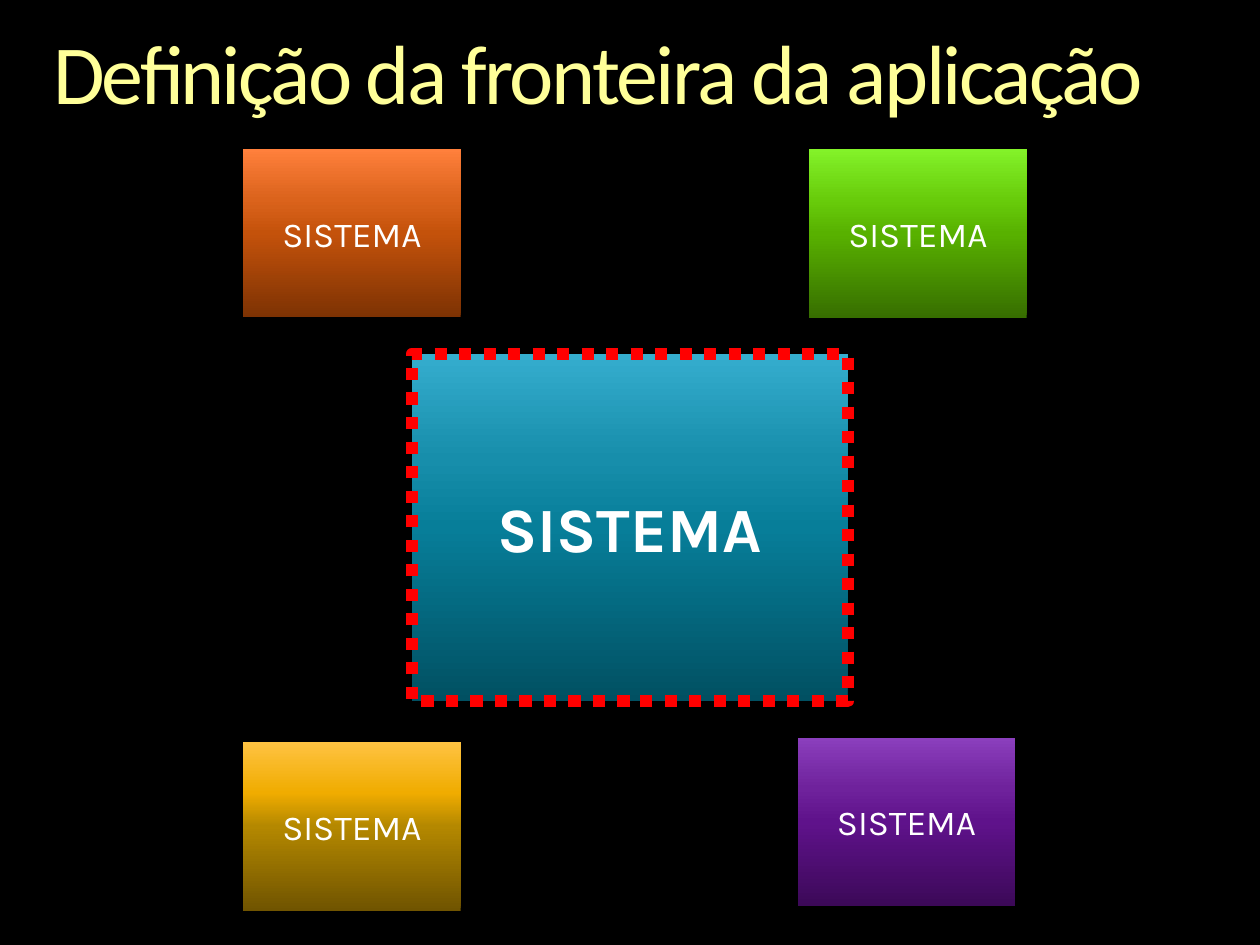
import copy

import pptx
import pptx.dml.color
import pptx.enum.dml
import pptx.enum.shapes
import pptx.enum.text
import pptx.oxml.ns
import pptx.util

Cm = pptx.util.Cm
Pt = pptx.util.Pt
RGBColor = pptx.dml.color.RGBColor

BLACK = RGBColor(0x00, 0x00, 0x00)
WHITE = RGBColor(0xFF, 0xFF, 0xFF)
RED = RGBColor(0xFF, 0x00, 0x00)
YELLOW = RGBColor(0xFF, 0xFF, 0x99)
BLUES = [RGBColor(0x01, 0x50, 0x62), RGBColor(0x07, 0x7E, 0x99),
         RGBColor(0x17, 0x8E, 0xAB), RGBColor(0x35, 0xAD, 0xCE)]
ORANGES = [RGBColor(0x7D, 0x32, 0x03), RGBColor(0xC4, 0x52, 0x0B),
           RGBColor(0xDB, 0x63, 0x1C), RGBColor(0xFF, 0x80, 0x3C)]
GREENS = [RGBColor(0x37, 0x6E, 0x00), RGBColor(0x58, 0xB1, 0x00),
          RGBColor(0x68, 0xCC, 0x0B), RGBColor(0x83, 0xF2, 0x29)]
GOLDS = [RGBColor(0x70, 0x54, 0x00), RGBColor(0xB4, 0x88, 0x00),
         RGBColor(0xF0, 0xAC, 0x00), RGBColor(0xFF, 0xC3, 0x42)]
PURPLES = [RGBColor(0x3C, 0x09, 0x58), RGBColor(0x5F, 0x12, 0x8B),
           RGBColor(0x6F, 0x22, 0x9C), RGBColor(0x8B, 0x3F, 0xBD)]


class BoundarySlide:
    stops = (0, 0.5, 0.7, 1)
    title_format = {"name": "Calibri", "size": Pt(48)}
    system_format = {"name": "Karla", "size": Pt(20), "bold": False}
    main_format = {"name": "Karla", "size": Pt(36), "bold": True}

    def __init__(self, page):
        self.page = page
        page.background.fill.solid()
        page.background.fill.fore_color.rgb = BLACK

    def add_span(self, para, text, color, formats):
        span = para.add_run()
        span.text = text
        for name, value in formats.items():
            setattr(span.font, name, value)
        span.font.color.rgb = color
        return span

    def title(self, text, left, top, width, height):
        box = self.page.shapes.add_textbox(Cm(left), Cm(top), Cm(width), Cm(height))
        frame = box.text_frame
        frame.word_wrap = True
        for side in ("left", "top", "right", "bottom"):
            setattr(frame, f"margin_{side}", 0)
        para = frame.paragraphs[0]
        para.line_spacing = 0.9
        span = self.add_span(para, text, YELLOW, self.title_format)
        span._r.get_or_add_rPr().set("spc", "-150")

    def gradient(self, box, colors):
        box.fill.gradient()
        box.fill.gradient_angle = 90
        stop_list = box._element.spPr.find(".//" + pptx.oxml.ns.qn("a:gsLst"))
        while len(stop_list) < len(colors):
            stop_list.append(copy.deepcopy(stop_list[0]))
        for stop, position, color in zip(box.fill.gradient_stops, self.stops, colors):
            stop.position = position
            stop.color.rgb = color

    def system(self, colors, left, top, width=4.39, height=3.4, formats=system_format):
        box = self.page.shapes.add_shape(
            pptx.enum.shapes.MSO_SHAPE.RECTANGLE,
            Cm(left), Cm(top), Cm(width), Cm(height))
        box.shadow.inherit = False
        box.line.fill.background()
        self.gradient(box, colors)
        frame = box.text_frame
        frame.word_wrap = True
        frame.vertical_anchor = pptx.enum.text.MSO_ANCHOR.MIDDLE
        para = frame.paragraphs[0]
        para.alignment = pptx.enum.text.PP_ALIGN.CENTER
        self.add_span(para, "SISTEMA", WHITE, formats)
        return box

    def bounded_system(self, colors, left, top, width, height):
        box = self.system(colors, left, top, width, height, self.main_format)
        box.line.color.rgb = RED
        box.line.width = Pt(7)
        box.line.dash_style = pptx.enum.dml.MSO_LINE.ROUND_DOT


def main():
    deck = pptx.Presentation()
    deck.slide_width = Cm(25.4)
    deck.slide_height = Cm(19.05)
    slide = BoundarySlide(deck.slides.add_slide(deck.slide_layouts[6]))
    slide.title("Definição da fronteira da aplicação", 1.07, 0.64, 23.29, 1.85)
    slide.bounded_system(BLUES, 8.3, 7.14, 8.79, 7)
    for colors, left, top in (
        (ORANGES, 4.9, 3),
        (GREENS, 16.31, 3.01),
        (GOLDS, 4.9, 14.96),
        (PURPLES, 16.08, 14.87),
    ):
        slide.system(colors, left, top)
    deck.save("out.pptx")


if __name__ == "__main__":
    main()
